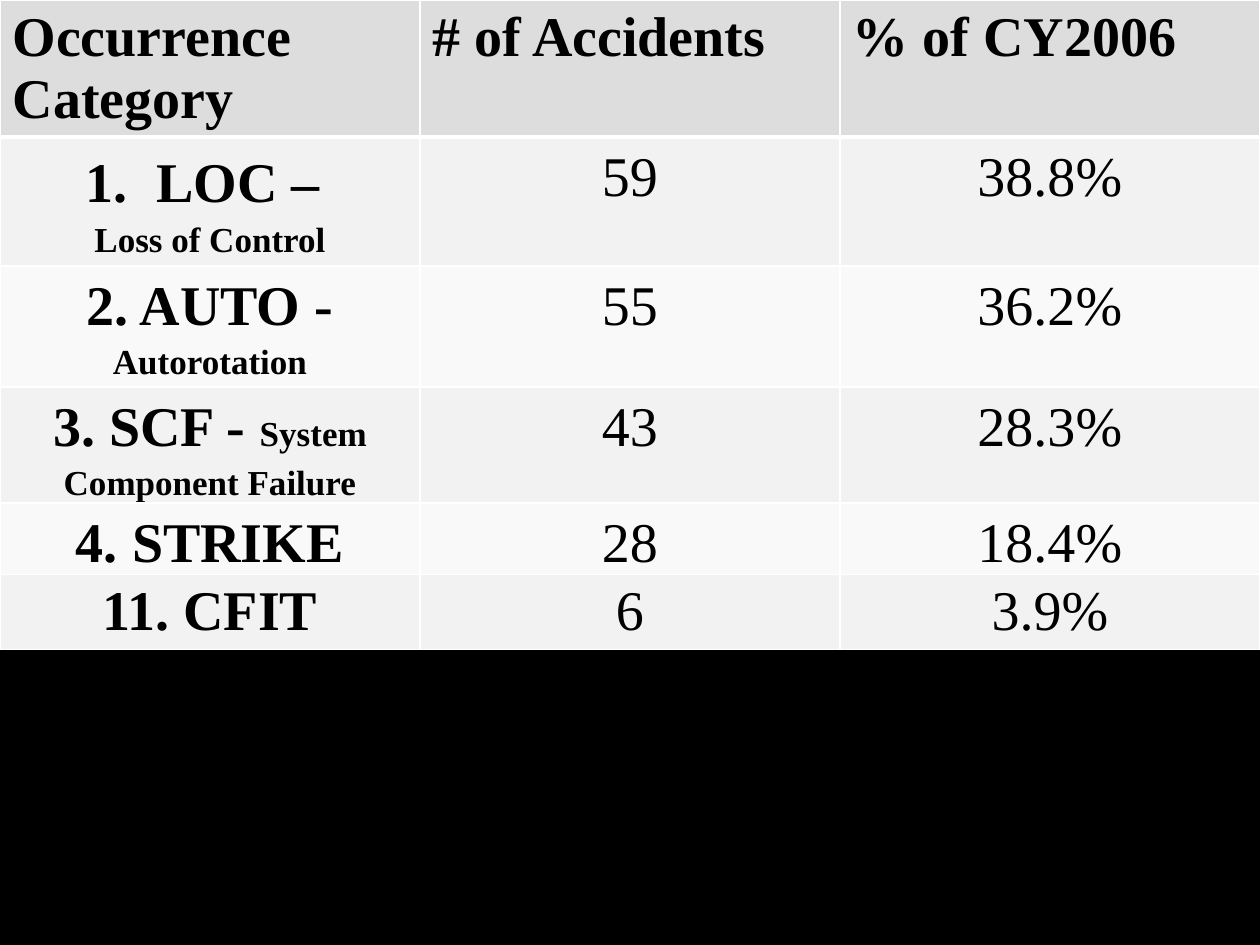
"""Build a slide with a table of accident counts by occurrence category."""
from lxml.etree import SubElement
from pptx import Presentation
from pptx.dml.color import RGBColor
from pptx.enum.text import PP_ALIGN as Align
from pptx.oxml.ns import qn
from pptx.util import Inches, Pt

BLACK = RGBColor(0x00, 0x00, 0x00)
WHITE = RGBColor(0xFF, 0xFF, 0xFF)
HEADER_GRAY = RGBColor(0xDD, 0xDD, 0xDD)
BAND_GRAYS = RGBColor(0xF2, 0xF2, 0xF2), RGBColor(0xF9, 0xF9, 0xF9)

FONT = "Times New Roman"
LARGE, SMALL = 32, 20
ROOMY, TIGHT = (0.1, 0.05), (0.07, 0)

HEADINGS = ["Occurrence Category", "# of Accidents", "% of CY2006"]
OCCURRENCES = [
    ([[("LOC – ", LARGE)], [("Loss of Control", SMALL)]], "59", "38.8%"),
    ([[("2. AUTO - ", LARGE), ("Autorotation", SMALL)]], "55", "36.2%"),
    ([[("3. SCF - ", LARGE), ("System Component Failure", SMALL)]], "43", "28.3%"),
    ([[("4. STRIKE", LARGE)]], "28", "18.4%"),
    ([[("11. CFIT", LARGE)]], "6", "3.9%"),
]
ROW_HEIGHTS = [1, 0.99, 0.96, 0.82, 0.53, 0.53]


def write(cell, paragraphs, bold=False, align=None, spacing=None, insets=TIGHT):
    cell.margin_left = cell.margin_right = Inches(insets[0])
    cell.margin_top = cell.margin_bottom = Inches(insets[1])
    frame = cell.text_frame
    for index, pieces in enumerate(paragraphs):
        paragraph = frame.add_paragraph() if index else frame.paragraphs[0]
        paragraph.alignment = align
        paragraph.line_spacing = spacing
        for words, size in pieces:
            run = paragraph.add_run()
            run.text = words
            run.font.name, run.font.size, run.font.bold = FONT, Pt(size), bold
            run.font.color.rgb = BLACK


def paint(cell, color, top=1, bottom=1):
    properties = cell._tc.get_or_add_tcPr()
    for side, width in zip("LRTB", (1, 1, top, bottom)):
        line = SubElement(properties, qn(f"a:ln{side}"), w=str(Pt(width)))
        SubElement(SubElement(line, qn("a:solidFill")), qn("a:srgbClr"), val=str(WHITE))
    cell.fill.solid()
    cell.fill.fore_color.rgb = color


def hang(paragraph, indent, numbered=False):
    properties = paragraph._p.get_or_add_pPr()
    properties.set("marL", str(Inches(indent)))
    properties.set("indent", str(-Inches(indent)))
    if numbered:
        SubElement(properties, qn("a:buFont"), typeface="+mj-lt")
        SubElement(properties, qn("a:buAutoNum"), type="arabicPeriod")


def main():
    deck = Presentation()
    deck.slide_width, deck.slide_height = Inches(10), Inches(7.5)
    slide = deck.slides.add_slide(deck.slide_layouts[6])
    slide.background.fill.solid()
    slide.background.fill.fore_color.rgb = BLACK

    table = slide.shapes.add_table(
        len(ROW_HEIGHTS), len(HEADINGS), 0, 0, deck.slide_width, Inches(sum(ROW_HEIGHTS))
    ).table
    for row, height in zip(table.rows, ROW_HEIGHTS):
        row.height = Inches(height)

    for column, heading in enumerate(HEADINGS):
        cell = table.cell(0, column)
        write(cell, [[(heading, LARGE)]], bold=True, insets=ROOMY)
        paint(cell, HEADER_GRAY, bottom=3)

    last = len(OCCURRENCES)
    for row, (category, *figures) in enumerate(OCCURRENCES, start=1):
        contents = [category] + [[[(figure, LARGE)]] for figure in figures]
        for column, paragraphs in enumerate(contents):
            cell = table.cell(row, column)
            roomy = row == last or (row == 1 and column == 0)
            write(cell, paragraphs, bold=column == 0, align=Align.CENTER,
                  spacing=None if row == last else 1.15,
                  insets=ROOMY if roomy else TIGHT)
            paint(cell, BAND_GRAYS[(row - 1) % 2], top=3 if row == 1 else 1)

    code, meaning = table.cell(1, 0).text_frame.paragraphs
    hang(code, 0.56, numbered=True)
    hang(meaning, 0.5)
    deck.save("out.pptx")


if __name__ == "__main__":
    main()
